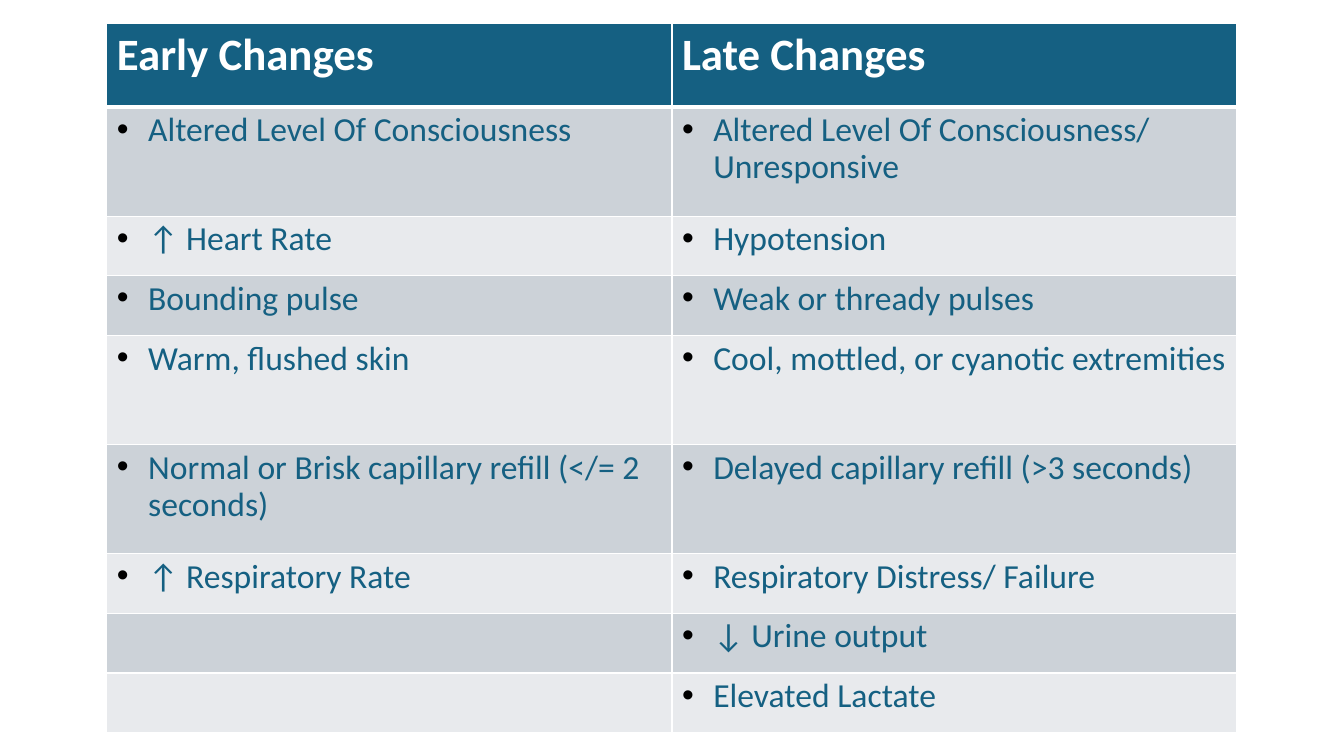
import pptx
import pptx.dml.color
import pptx.oxml
import pptx.oxml.ns
import pptx.util
from pptx.util import Inches

TEAL = "156082"
WHITE = "FFFFFF"
BANDS = ("CCD2D8", "E8EAED")
ROW_HEIGHTS = (0.83, 1.08, 0.59, 0.59, 1.08, 1.08, 0.59, 0.59, 0.59)
CHANGES = (
    ("Early Changes", "Late Changes"),
    ("Altered Level Of Consciousness", "Altered Level Of Consciousness/ Unresponsive"),
    ("↑ Heart Rate", "Hypotension"),
    ("Bounding pulse", "Weak or thready pulses"),
    ("Warm, flushed skin", "Cool, mottled, or cyanotic extremities"),
    ("Normal or Brisk capillary refill (</= 2 seconds)", "Delayed capillary refill (>3 seconds)"),
    ("↑ Respiratory Rate", "Respiratory Distress/ Failure"),
    ("", "↓ Urine output"),
    ("", "Elevated Lactate"),
)


def color(value):
    return pptx.dml.color.RGBColor.from_string(value)


def add_xml(parent, markup):
    namespace = pptx.oxml.ns.nsdecls("a")
    parent.append(pptx.oxml.parse_xml(markup.replace(">", f" {namespace}>", 1)))


def set_borders(cell, bottom_width):
    properties = cell._tc.get_or_add_tcPr()
    for side, width in (("L", 1), ("R", 1), ("T", 1), ("B", bottom_width)):
        add_xml(properties, f'<a:ln{side} w="{pptx.util.Pt(width)}"><a:solidFill>'
                            f'<a:srgbClr val="{WHITE}"/></a:solidFill></a:ln{side}>')


def add_bullet(paragraph):
    properties = paragraph._p.get_or_add_pPr()
    properties.set("marL", str(Inches(0.31)))
    properties.set("indent", str(Inches(-0.31)))
    add_xml(properties, '<a:buClr><a:srgbClr val="000000"/></a:buClr>')
    add_xml(properties, '<a:buFont typeface="Arial"></a:buFont>')
    add_xml(properties, '<a:buChar char="•"></a:buChar>')
    paragraph.line_spacing = 0.9


def fill_cell(cell, text, row):
    is_header = row == 0
    set_borders(cell, 3 if is_header else 1)
    cell.fill.solid()
    cell.fill.fore_color.rgb = color(TEAL if is_header else BANDS[(row - 1) % 2])
    if not text:
        return
    cell.text = text
    paragraph = cell.text_frame.paragraphs[0]
    if not is_header:
        add_bullet(paragraph)
    paragraph.font.name = "Calibri"
    paragraph.font.size = pptx.util.Pt(32 if is_header else 24)
    paragraph.font.bold = is_header
    paragraph.font.color.rgb = color(WHITE if is_header else TEAL)


def add_changes_table(page, left, top, width, height):
    frame = page.shapes.add_table(len(CHANGES), len(CHANGES[0]), Inches(left), Inches(top),
                                  Inches(width), Inches(height))
    table = frame.table
    for row, (texts, share) in enumerate(zip(CHANGES, ROW_HEIGHTS)):
        table.rows[row].height = Inches(height * share / sum(ROW_HEIGHTS))
        for column, text in enumerate(texts):
            fill_cell(table.cell(row, column), text, row)


def main():
    deck = pptx.Presentation()
    deck.slide_width = Inches(13.33)
    deck.slide_height = Inches(7.5)
    page = deck.slides.add_slide(deck.slide_layouts[6])
    add_changes_table(page, 1.06, 0.23, 11.21, 7.04)
    deck.save("out.pptx")


if __name__ == "__main__":
    main()
